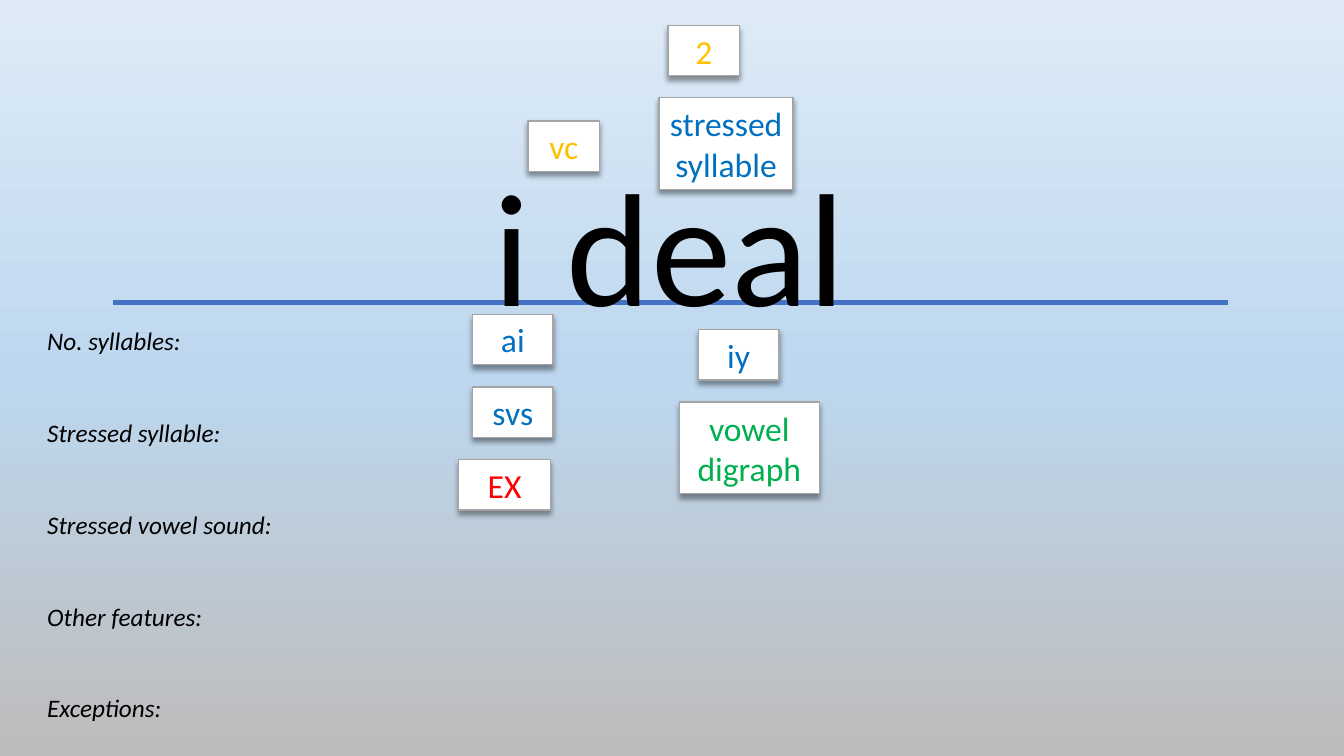
from copy import deepcopy
from lxml import etree
from pptx import Presentation
from pptx import util as u
from pptx.dml.color import RGBColor
from pptx.enum import shapes, text
from pptx.oxml import ns

BLACK = RGBColor(0, 0, 0)
WHITE = RGBColor(255, 255, 255)
GRAY = RGBColor(0xA5, 0xA5, 0xA5)
BLUE = RGBColor(0x00, 0x70, 0xC0)
GOLD = RGBColor(0xFF, 0xC0, 0x00)
RED = RGBColor(0xFF, 0, 0)
GREEN = RGBColor(0x00, 0xB0, 0x50)
RULE = RGBColor(0x44, 0x72, 0xC4)
SKY = [
    (0, RGBColor(0xDE, 0xEB, 0xF7)),
    (0.5, RGBColor(0xBD, 0xD7, 0xEE)),
    (1, RGBColor(0xBD, 0xBC, 0xBC)),
]

WORD = "i deal"
STRESS = ("stressed\nsyllable", 16.61, 2.46, 3.38, BLUE)
CARDS = [
    ("2", 16.84, 0.64, 1.8, GOLD),
    ("vc", 13.31, 3.05, 1.8, GOLD),
    ("EX", 11.56, 11.58, 2.31, RED),
    ("iy", 17.6, 8.31, 2.03, BLUE),
    ("ai", 11.91, 7.92, 2.03, BLUE),
    ("svs", 11.91, 9.75, 2.03, BLUE),
    ("vowel\ndigraph", 17.12, 10.13, 3.53, GREEN),
]
LABELS = [
    "No. syllables:",
    "Stressed syllable:",
    "Stressed vowel sound:",
    "Other features:",
    "Exceptions:",
]
LINE = 1.04
PAD = 0.23
GAP = 43.95

deck = Presentation()
deck.slide_width, deck.slide_height = u.Cm(33.87), u.Cm(19.05)
slide = deck.slides.add_slide(deck.slide_layouts[6])


def paint():
    fill = slide.background.fill
    fill.gradient()
    fill.gradient_angle = 270
    stops = next(slide.element.iter(ns.qn("a:gsLst")))
    stops.append(deepcopy(stops[0]))
    for stop, (place, color) in zip(fill.gradient_stops, SKY):
        stop.position = place
        stop.color.rgb = color


def write(shape, words, size, color, align, italic=None, gap=0):
    frame = shape.text_frame
    frame.text = words
    frame.word_wrap = True
    frame.auto_size = text.MSO_AUTO_SIZE.SHAPE_TO_FIT_TEXT
    for i, para in enumerate(frame.paragraphs):
        para.alignment = align
        if i and gap:
            para.space_before = u.Pt(gap)
        for run in para.runs:
            font = run.font
            font.name, font.size, font.italic = "Calibri", u.Pt(size), italic
            font.color.rgb = color


def shade(shape):
    shape.shadow.inherit = False
    glow = shape.element.spPr.find(ns.qn("a:effectLst"))
    drop = etree.SubElement(
        glow, ns.qn("a:outerShdw"), blurRad=str(u.Pt(4)), dist=str(u.Pt(3)),
        dir="5400000", algn="ctr", rotWithShape="0")
    tone = etree.SubElement(drop, ns.qn("a:srgbClr"), val=str(BLACK))
    etree.SubElement(tone, ns.qn("a:alpha"), val="40000")


def card(words, left, top, width, color):
    tall = PAD + LINE * len(words.split("\n"))
    box = slide.shapes.add_shape(
        shapes.MSO_SHAPE.RECTANGLE,
        u.Cm(left), u.Cm(top), u.Cm(width), u.Cm(tall))
    box.fill.solid()
    box.fill.fore_color.rgb = WHITE
    box.line.color.rgb = GRAY
    box.line.width = u.Pt(1)
    shade(box)
    write(box, words, 24, color, text.PP_ALIGN.CENTER)


def rule():
    line = slide.shapes.add_connector(
        shapes.MSO_CONNECTOR.STRAIGHT,
        u.Cm(2.84), u.Cm(7.62), u.Cm(30.94), u.Cm(7.62))
    line.line.color.rgb = RULE
    line.line.width = u.Pt(3)
    etree.SubElement(line.element.spPr, ns.qn("a:effectLst"))


def main():
    paint()
    card(*STRESS)
    rule()
    word = slide.shapes.add_textbox(
        u.Cm(4.37), u.Cm(3.53), u.Cm(24.99), u.Cm(5.18))
    write(word, WORD, 115, BLACK, text.PP_ALIGN.CENTER)
    for item in CARDS:
        card(*item)
    notes = slide.shapes.add_textbox(
        u.Cm(0.94), u.Cm(8.08), u.Cm(6.22), u.Cm(10.26))
    write(notes, "\n".join(LABELS), 18, BLACK, text.PP_ALIGN.LEFT, True, GAP)
    deck.save("out.pptx")


if __name__ == "__main__":
    main()
